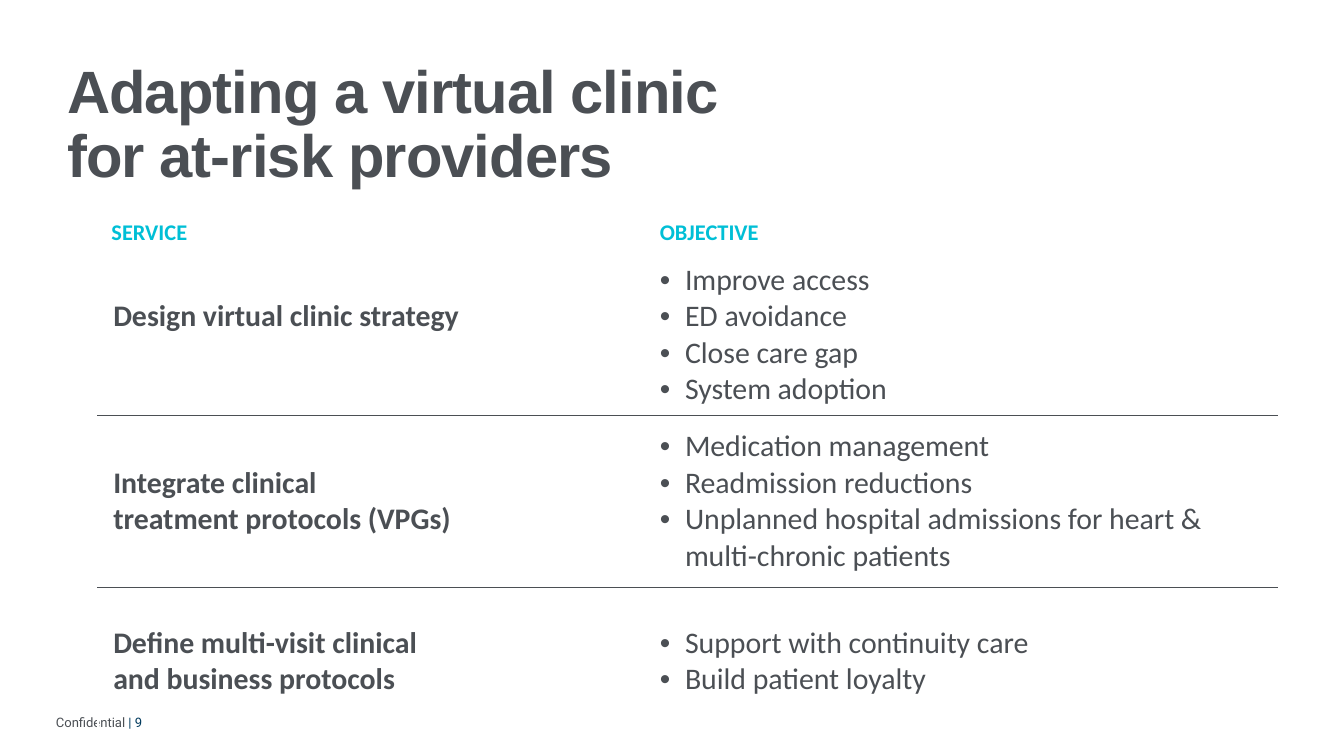
from dataclasses import dataclass

from lxml import etree
from pptx import Presentation
from pptx.dml.color import RGBColor
from pptx.enum import text
from pptx.oxml.ns import qn
from pptx.util import Pt


@dataclass(frozen=True)
class Theme:
    ink: str = "4B4F54"
    accent: str = "00BFD6"
    navy: str = "003A5D"
    heading_font: str = "Arial"
    body_font: str = "Calibri"
    footer_font: str = "Roboto"
    title_size: float = 32
    body_size: float = 16
    header_size: float = 12
    footer_size: float = 7
    rule_width: float = 0.75


def set_values(target, values):
    for name, value in values.items():
        setattr(target, name, value)


class SlideBuilder:
    def __init__(self, presentation, theme):
        self.theme = theme
        self.slide = presentation.slides.add_slide(presentation.slide_layouts[5])

    def style_run(self, run, font, size, color, bold=False):
        set_values(run.font, {"name": font, "size": Pt(size), "bold": bold})
        run.font.color.rgb = RGBColor.from_string(color)

    def place(self, shape, left, top, width, height):
        set_values(shape, {"left": Pt(left), "top": Pt(top),
                           "width": Pt(width), "height": Pt(height)})

    def clear_margins(self, frame):
        set_values(frame, {f"margin_{side}": 0 for side in ("left", "top", "right", "bottom")})

    def title(self, words, box):
        theme = self.theme
        shape = self.slide.shapes.title
        self.place(shape, *box)
        frame = shape.text_frame
        self.clear_margins(frame)
        set_values(frame, {"word_wrap": True, "vertical_anchor": text.MSO_ANCHOR.TOP,
                           "auto_size": text.MSO_AUTO_SIZE.NONE})
        paragraph = frame.paragraphs[0]
        set_values(paragraph, {"text": words, "line_spacing": 0.9,
                               "alignment": text.PP_ALIGN.LEFT})
        for run in paragraph.runs:
            self.style_run(run, theme.heading_font, theme.title_size, theme.ink, True)
            run.font._element.set("spc", "-50")

    def footer(self, parts, box):
        frame = self.slide.shapes.add_textbox(*map(Pt, box)).text_frame
        self.clear_margins(frame)
        set_values(frame, {"word_wrap": False,
                           "auto_size": text.MSO_AUTO_SIZE.SHAPE_TO_FIT_TEXT})
        for words, color in parts:
            run = frame.paragraphs[0].add_run()
            run.text = words
            self.style_run(run, self.theme.footer_font, self.theme.footer_size, color)

    def table(self, origin, widths, heights):
        frame = self.slide.shapes.add_table(len(heights), len(widths), *map(Pt, origin),
                                            Pt(sum(widths)), Pt(sum(heights)))
        table = frame.table
        set_values(table, {"first_row": False, "horz_banding": False})
        for column, width in zip(table.columns, widths):
            column.width = Pt(width)
        for row, height in zip(table.rows, heights):
            row.height = Pt(height)
        return table

    def cell(self, cell, lines, size, color, bold, indent=0, bullet=None):
        cell.fill.background()
        cell.vertical_anchor = text.MSO_ANCHOR.MIDDLE
        frame = cell.text_frame
        for index, line in enumerate(lines):
            paragraph = frame.add_paragraph() if index else frame.paragraphs[0]
            properties = paragraph._p.get_or_add_pPr()
            properties.set("marL", str(Pt(indent)))
            properties.set("indent", str(Pt(-indent if bullet else 0)))
            if bullet:
                etree.SubElement(properties, qn("a:buFont"), typeface="Arial")
                etree.SubElement(properties, qn("a:buChar"), char=bullet)
            paragraph.text = line
            for run in paragraph.runs:
                self.style_run(run, self.theme.body_font, size, color, bold)

    def border(self, cell, side):
        line = etree.Element(qn(f"a:ln{side}"), w=str(Pt(self.theme.rule_width)))
        fill = etree.SubElement(line, qn("a:solidFill"))
        etree.SubElement(fill, qn("a:srgbClr"), val=self.theme.ink)
        cell._tc.get_or_add_tcPr().insert(0, line)


HEADERS = ("SERVICE", "OBJECTIVE")
SERVICES = [
    (["Design virtual clinic strategy"],
     ["Improve access", "ED avoidance", "Close care gap", "System adoption"]),
    (["Integrate clinical \vtreatment protocols (VPGs)"],
     ["Medication management", "Readmission reductions",
      "Unplanned hospital admissions for heart & multi-chronic patients"]),
    (["Define multi-visit clinical", "and business protocols"],
     ["Support with continuity care", "Build patient loyalty"]),
]


def main():
    theme = Theme()
    presentation = Presentation()
    set_values(presentation, {"slide_width": Pt(720), "slide_height": Pt(405)})
    builder = SlideBuilder(presentation, theme)

    builder.footer([("Confidential", theme.ink), (" | 9", theme.navy)], (30, 382.5, 52, 8.5))
    builder.title("Adapting a virtual clinic \vfor at-risk providers", (36, 33, 679, 48))

    table = builder.table((52.5, 113.8), (293.8, 337.7), (22.3, 86.4, 92.2, 79.2))
    for column, header in enumerate(HEADERS):
        builder.cell(table.cell(0, column), [header], theme.header_size, theme.accent, True)
    for row, (service, objectives) in enumerate(SERVICES, start=1):
        builder.cell(table.cell(row, 0), service, theme.body_size, theme.ink, True, 1)
        builder.cell(table.cell(row, 1), objectives, theme.body_size, theme.ink, False, 13.5, "•")
        for column in range(len(HEADERS)):
            if row < len(SERVICES):
                builder.border(table.cell(row, column), "B")
            if row > 1:
                builder.border(table.cell(row, column), "T")
    table.cell(1, 0).margin_bottom = Pt(23)

    presentation.save("out.pptx")


if __name__ == "__main__":
    main()
